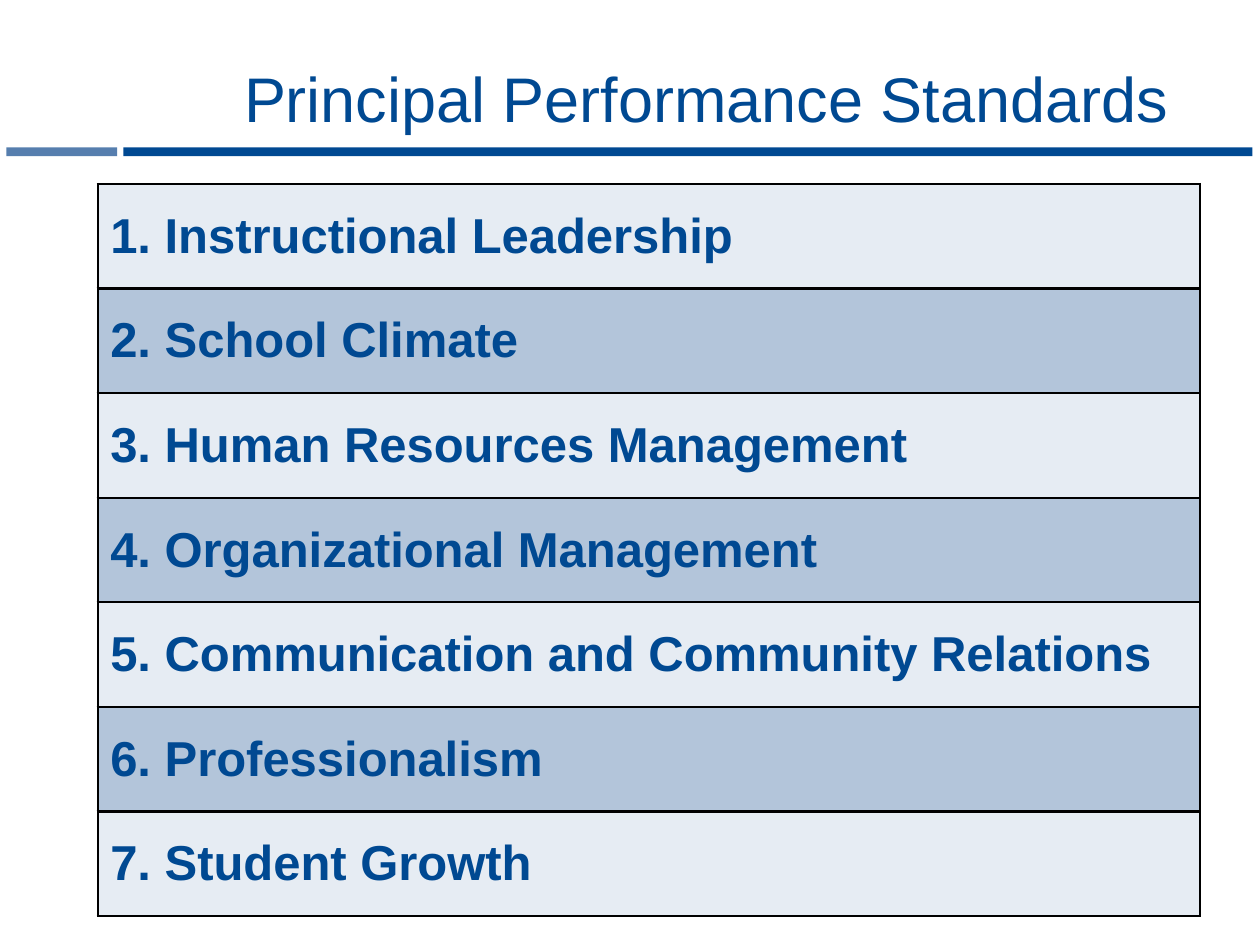
from lxml import etree
from pptx import Presentation
from pptx.dml.color import RGBColor
from pptx.enum.shapes import MSO_SHAPE
from pptx.enum.text import MSO_ANCHOR, PP_ALIGN
from pptx.oxml.ns import qn
from pptx.util import Inches, Pt

RECTANGLE = MSO_SHAPE.RECTANGLE
MIDDLE, BOTTOM = MSO_ANCHOR.MIDDLE, MSO_ANCHOR.BOTTOM
CENTER = PP_ALIGN.CENTER

NAVY = RGBColor(0x00, 0x49, 0x92)
STEEL = RGBColor(0x56, 0x7E, 0xAE)
PALE = RGBColor(0xE6, 0xEC, 0xF3)
LIGHT_BLUE = RGBColor(0xB3, 0xC5, 0xDA)
BLACK = RGBColor(0x00, 0x00, 0x00)

# Content
TITLE = "Principal Performance Standards"
STANDARDS = [
    "Instructional Leadership",
    "School Climate",
    "Human Resources Management",
    "Organizational Management",
    "Communication and Community Relations",
    "Professionalism",
    "Student Growth",
]
RULE_BARS = [(0.05, 0.88, STEEL), (0.98, 8.96, NAVY)]  # left, width, colour

# Layout in inches
RULE_TOP, RULE_HEIGHT = 1.17, 0.07
LIST_LEFT, LIST_TOP = 0.775, 1.46
LIST_WIDTH, ROW_HEIGHT = 8.75, 0.83
BORDER_WIDTH = Pt(1.5)


def style_text(paragraph, size, bold=False):
    for run in paragraph.runs:
        run.font.name = "Arial"
        run.font.size = Pt(size)
        run.font.bold = bold
        run.font.color.rgb = NAVY


def add_borders(cell):
    properties = cell._tc.get_or_add_tcPr()
    for position, side in enumerate(("lnL", "lnR", "lnT", "lnB")):
        line = etree.Element(qn(f"a:{side}"), w=str(BORDER_WIDTH))
        fill = etree.SubElement(line, qn("a:solidFill"))
        etree.SubElement(fill, qn("a:srgbClr"), val=str(BLACK))
        properties.insert(position, line)


def add_standard(slide, index, name):
    frame = slide.shapes.add_table(
        1, 1, Inches(LIST_LEFT), Inches(LIST_TOP + index * ROW_HEIGHT),
        Inches(LIST_WIDTH), Inches(ROW_HEIGHT))
    frame.table.first_row = False
    frame.table.horz_banding = False
    cell = frame.table.cell(0, 0)
    cell.fill.solid()
    cell.fill.fore_color.rgb = LIGHT_BLUE if index % 2 else PALE
    cell.vertical_anchor = MIDDLE
    cell.text_frame.text = f"{index + 1}. {name}"
    style_text(cell.text_frame.paragraphs[0], 28, bold=True)
    add_borders(cell)


def main():
    presentation = Presentation()
    presentation.slide_width, presentation.slide_height = Inches(10), Inches(7.5)
    slide = presentation.slides.add_slide(presentation.slide_layouts[6])

    # Two-part rule under the title
    for left, width, colour in RULE_BARS:
        bar = slide.shapes.add_shape(
            RECTANGLE, Inches(left), Inches(RULE_TOP),
            Inches(width), Inches(RULE_HEIGHT))
        bar.shadow.inherit = False
        bar.fill.solid()
        bar.fill.fore_color.rgb = colour
        bar.line.fill.background()

    # Title
    title = slide.shapes.add_textbox(
        Inches(1.21), Inches(0.41), Inches(8.79), Inches(0.71))
    title.text_frame.word_wrap = True
    title.text_frame.vertical_anchor = BOTTOM
    title.text_frame.text = TITLE
    paragraph = title.text_frame.paragraphs[0]
    paragraph.alignment = CENTER
    style_text(paragraph, 36)

    # One single-cell table per standard
    for index, name in enumerate(STANDARDS):
        add_standard(slide, index, name)

    presentation.save("out.pptx")


if __name__ == "__main__":
    main()
